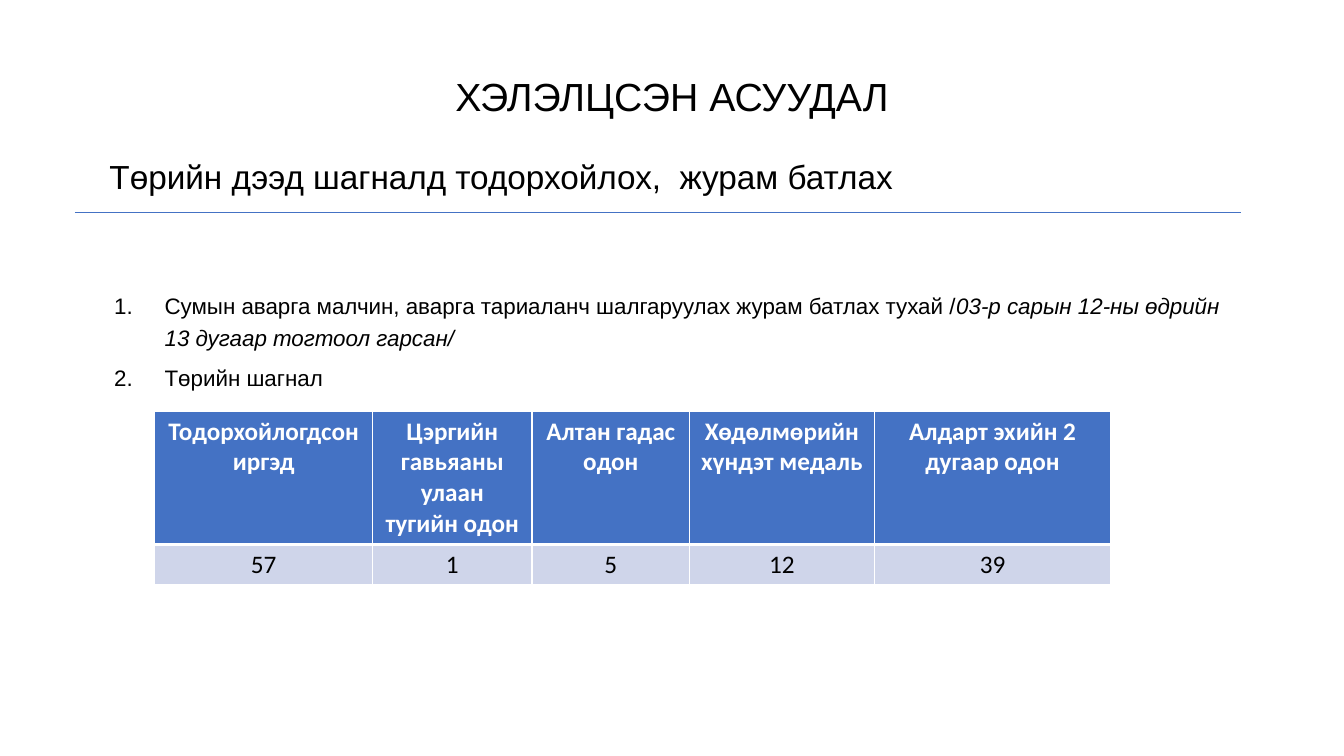
from lxml import etree
from pptx import Presentation
from pptx.dml.color import RGBColor
from pptx.enum import shapes, text
from pptx.oxml import ns
from pptx.util import Cm, Pt

BLACK = RGBColor(0x00, 0x00, 0x00)
WHITE = RGBColor(0xFF, 0xFF, 0xFF)
BLUE = RGBColor(0x44, 0x72, 0xC4)
PALE_BLUE = RGBColor(0xCF, 0xD5, 0xEA)

AGENDA = [
    [("Сумын аварга малчин, аварга тариаланч шалгаруулах журам батлах тухай /", False),
     ("03-р сарын 12-ны өдрийн 13 дугаар тогтоол гарсан/", True)],
    [("Төрийн шагнал", False)],
]
AWARDS = [
    # heading, count, column width in cm
    ("Тодорхойлогдсон иргэд", "57", 5.49),
    ("Цэргийн гавьяаны улаан тугийн одон", "1", 4.02),
    ("Алтан гадас одон", "5", 3.97),
    ("Хөдөлмөрийн хүндэт медаль", "12", 4.65),
    ("Алдарт эхийн 2 дугаар одон", "39", 5.97),
]


def style(paragraph, size, color=BLACK, name="Arial", bold=False):
    font = paragraph.font
    font.size, font.name, font.bold = Pt(size), name, bold
    font.color.rgb = color


def add_text_frame(slide, left, top, width, height):
    frame = slide.shapes.add_textbox(Cm(left), Cm(top), Cm(width), Cm(height)).text_frame
    frame.word_wrap = True
    return frame


def add_title(slide, left, top, width, height):
    frame = add_text_frame(slide, left, top, width, height)
    frame.vertical_anchor = text.MSO_ANCHOR.MIDDLE
    title = frame.paragraphs[0]
    title.text = "ХЭЛЭЛЦСЭН АСУУДАЛ"
    title.alignment = text.PP_ALIGN.CENTER
    title.line_spacing = 0.9
    style(title, 28)


def add_subtitle(slide, left, top, width, height):
    frame = add_text_frame(slide, left, top, width, height)
    frame.margin_left = Cm(1.42)
    subtitle = frame.paragraphs[0]
    subtitle.text = "Төрийн дээд шагналд тодорхойлох,  журам батлах"
    subtitle.line_spacing = 0.8
    style(subtitle, 23.8)

    # Rule beneath the subtitle
    rule_left, rule_top = Cm(left + 0.55), Cm(top + 1.36)
    rule = slide.shapes.add_connector(shapes.MSO_CONNECTOR.STRAIGHT, rule_left, rule_top,
                                      rule_left + Cm(29.38), rule_top)
    rule.line.color.rgb = BLUE
    rule.line.width = Pt(0.5)
    etree.SubElement(rule._element.spPr, ns.qn("a:effectLst"))


def add_agenda(slide, left, top, width, height):
    frame = add_text_frame(slide, left, top, width, height)
    for index, parts in enumerate(AGENDA):
        item = frame.add_paragraph() if index else frame.paragraphs[0]
        item.line_spacing = 1.2
        item.space_after = Pt(6)
        # Automatic numbering with a hanging indent
        properties = item._p.get_or_add_pPr()
        properties.set("marL", str(Cm(1.57)))
        properties.set("indent", str(-Cm(1.27)))
        etree.SubElement(properties, ns.qn("a:buFont"), typeface="+mj-lt")
        etree.SubElement(properties, ns.qn("a:buAutoNum"), type="arabicPeriod")
        style(item, 16)
        for words, italic in parts:
            run = item.add_run()
            run.text = words
            run.font.italic = italic


def add_borders(cell, bottom):
    properties = cell._tc.get_or_add_tcPr()
    for side, points in (("L", 1), ("R", 1), ("T", 1), ("B", bottom)):
        border = etree.SubElement(properties, ns.qn("a:ln" + side), w=str(Pt(points)))
        fill = etree.SubElement(border, ns.qn("a:solidFill"))
        etree.SubElement(fill, ns.qn("a:srgbClr"), val=str(WHITE))


def add_awards(slide, left, top, row_heights):
    width = sum(award[2] for award in AWARDS)
    awards = slide.shapes.add_table(2, len(AWARDS), Cm(left), Cm(top),
                                    Cm(width), Cm(sum(row_heights))).table
    awards.horz_banding = False
    for row, height in zip(awards.rows, row_heights):
        row.height = Cm(height)
    row_looks = [(BLUE, WHITE, True, 3), (PALE_BLUE, BLACK, False, 1)]
    for column, (heading, count, column_width) in enumerate(AWARDS):
        awards.columns[column].width = Cm(column_width)
        for row, words in enumerate((heading, count)):
            background, color, bold, bottom = row_looks[row]
            cell = awards.cell(row, column)
            add_borders(cell, bottom)
            cell.fill.solid()
            cell.fill.fore_color.rgb = background
            cell.text = words
            label = cell.text_frame.paragraphs[0]
            label.alignment = text.PP_ALIGN.CENTER
            style(label, 18, color, "Calibri", bold)


def main():
    deck = Presentation()
    deck.slide_width, deck.slide_height = Cm(33.87), Cm(19.05)
    slide = deck.slides.add_slide(deck.slide_layouts[6])
    add_title(slide, 2.33, 1.01, 29.21, 2.95)
    add_subtitle(slide, 1.34, 4, 22.96, 1.73)
    add_agenda(slide, 2.33, 7.09, 29.21, 9.75)
    add_awards(slide, 3.9, 10.36, (3.36, 1))
    deck.save("out.pptx")


if __name__ == "__main__":
    main()
